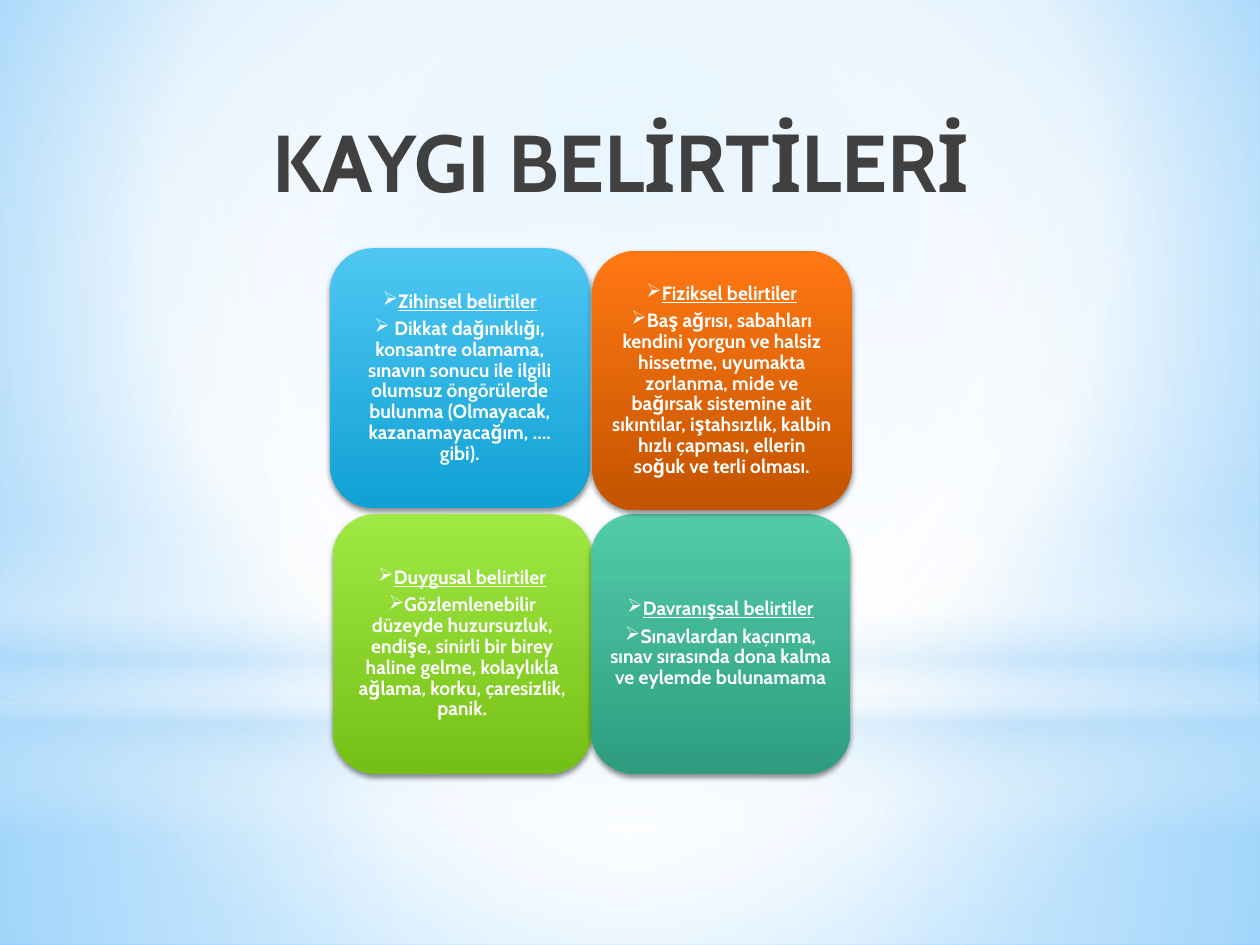
from lxml import etree
from pptx import Presentation
from pptx.dml.color import RGBColor
from pptx.enum.shapes import MSO_SHAPE as Preset
from pptx.enum.text import MSO_ANCHOR as Anchor, PP_ALIGN as Align
from pptx.oxml.ns import qn
from pptx.util import Inches, Pt

FONT = "Cabin"
WHITE = RGBColor(0xFF, 0xFF, 0xFF)
BLACK = RGBColor(0x00, 0x00, 0x00)
CHARCOAL = RGBColor(0x40, 0x40, 0x40)
MIST = RGBColor(0xB4, 0xDC, 0xFA)
SKY = RGBColor(0x9E, 0xD5, 0xFF)
AZURE = RGBColor(0x5B, 0xB9, 0xFF)
BLUES = RGBColor(0x4E, 0xC7, 0xF2), RGBColor(0x11, 0xA1, 0xD4)
GREENS = RGBColor(0xA0, 0xE8, 0x44), RGBColor(0x75, 0xC0, 0x16)
TEALS = RGBColor(0x52, 0xCB, 0xA9), RGBColor(0x2E, 0x9D, 0x7F)
ORANGES = RGBColor(0xFF, 0x78, 0x13), RGBColor(0xC4, 0x54, 0x00)

CENTRE = (50, 50, 50, 50)
TILE_SIZE = Inches(2.06)
TILE_MARGIN = Inches(0.1)

# Left, top, colours, heading, description
TILES = [
    (2.62, 1.97, BLUES, "Zihinsel belirtiler",
     " Dikkat dağınıklığı, konsantre olamama, sınavın sonucu ile ilgili olumsuz "
     "öngörülerde bulunma (Olmayacak, kazanamayacağım, …. gibi)."),
    (2.64, 4.08, GREENS, "Duygusal belirtiler",
     "Gözlemlenebilir düzeyde huzursuzluk, endişe, sinirli bir birey haline gelme, "
     "kolaylıkla ağlama, korku, çaresizlik, panik."),
    (4.69, 4.08, TEALS, "Davranışsal belirtiler",
     "Sınavlardan kaçınma, sınav sırasında dona kalma ve eylemde bulunamama"),
    (4.7, 1.99, ORANGES, "Fiziksel belirtiler",
     "Baş ağrısı, sabahları kendini yorgun ve halsiz hissetme, uyumakta zorlanma, "
     "mide ve bağırsak sistemine ait sıkıntılar, iştahsızlık, kalbin hızlı çapması, "
     "ellerin soğuk ve terli olması."),
]


def add_node(parent, tag, **attributes):
    values = {name: str(value) for name, value in attributes.items()}
    return etree.SubElement(parent, qn(tag), values)


def add_colour(parent, colour, opacity):
    node = add_node(parent, "a:srgbClr", val=colour)
    if opacity < 100:
        add_node(node, "a:alpha", val=opacity * 1000)


def set_gradient(owner, fill, stops, focus=None):
    """Stops are (position, colour, opacity); without a focus they run downwards."""
    fill.gradient()
    gradient = next(owner.iter(qn("a:gradFill")))
    for child in list(gradient):
        gradient.remove(child)
    stop_list = add_node(gradient, "a:gsLst")
    for position, colour, opacity in stops:
        add_colour(add_node(stop_list, "a:gs", pos=position * 1000), colour, opacity)
    if focus:
        circle = add_node(gradient, "a:path", path="circle")
        sides = {side: share * 1000 for side, share in zip("ltrb", focus)}
        add_node(circle, "a:fillToRect", **sides)
    else:
        add_node(gradient, "a:lin", ang=90 * 60000, scaled=0)


def add_gradient_shape(shapes, preset, box, stops, focus=None):
    shape = shapes.add_shape(preset, *box)
    shape.shadow.inherit = False
    shape.line.fill.background()
    set_gradient(shape._element, shape.fill, stops, focus)
    return shape


def add_backdrop(page, width, height):
    set_gradient(page._element, page.background.fill,
                 [(0, SKY, 100), (60, WHITE, 100), (100, AZURE, 100)], (20, 10, 20, 60))
    horizon = Inches(5.58)
    layers = [
        (Preset.RECTANGLE, horizon, height - horizon,
         [(0, WHITE, 91), (37, WHITE, 76), (100, MIST, 79)], CENTRE),
        (Preset.RECTANGLE, 0, horizon,
         [(0, WHITE, 89), (48, WHITE, 62), (100, MIST, 79)], CENTRE),
        (Preset.RECTANGLE, Inches(4.12), Inches(2.5),
         [(0, WHITE, 0), (29, WHITE, 30), (45, MIST, 40),
          (55, WHITE, 26), (65, MIST, 60), (100, WHITE, 0)], None),
        (Preset.OVAL, Inches(1.75), horizon, [(0, WHITE, 100), (56, WHITE, 0)], CENTRE),
    ]
    for preset, top, depth, stops, focus in layers:
        add_gradient_shape(page.shapes, preset, (0, top, width, depth), stops, focus)


def place_title(page, left, top, width, height):
    title = page.shapes.title
    title.left, title.top, title.width, title.height = left, top, width, height
    frame = title.text_frame
    frame.text = "KAYGI BELİRTİLERİ"
    frame.vertical_anchor = Anchor.TOP
    para = frame.paragraphs[0]
    para.alignment = Align.RIGHT
    font = para.runs[0].font
    font.name, font.size, font.bold = FONT, Pt(46), True
    font.color.rgb = CHARCOAL
    # Bring the title in front of the backdrop
    page.shapes._spTree.append(title._element)


def add_tile(page, left, top, size, colours, heading, description):
    group = page.shapes.add_group_shape()

    # Rounded card with a soft shadow below it
    stops = [(0, colours[0], 100), (100, colours[1], 100)]
    card = add_gradient_shape(group.shapes, Preset.ROUNDED_RECTANGLE,
                              (left, top, size, size), stops)
    effects = next(card._element.iter(qn("a:effectLst")))
    shadow = add_node(effects, "a:outerShdw", blurRad=Pt(3.1), dist=Pt(1.8),
                      dir=90 * 60000, rotWithShape=0)
    add_colour(shadow, BLACK, 45)

    # Bulleted heading and description
    inner = size - 2 * TILE_MARGIN
    label = group.shapes.add_textbox(left + TILE_MARGIN, top + TILE_MARGIN, inner, inner)
    frame = label.text_frame
    frame.word_wrap = True
    frame.vertical_anchor = Anchor.MIDDLE
    frame.margin_left = frame.margin_right = Inches(0.05)
    frame.margin_top = frame.margin_bottom = Inches(0.05)
    frame.text = f"{heading}\n{description}"
    for para in frame.paragraphs:
        para.alignment = Align.CENTER
        para.line_spacing = 0.9
        para.space_after = Pt(3.85)
        properties = para._p.get_or_add_pPr()
        properties.set("marL", "0")
        properties.set("indent", "0")
        add_node(properties, "a:buChar", char="➢")
        font = para.runs[0].font
        font.name, font.size, font.bold = FONT, Pt(11), True
        font.color.rgb = WHITE
    frame.paragraphs[0].runs[0].font.underline = True


def main():
    deck = Presentation()
    deck.slide_width, deck.slide_height = Inches(10), Inches(7.5)
    page = deck.slides.add_slide(deck.slide_layouts[5])
    add_backdrop(page, deck.slide_width, deck.slide_height)
    place_title(page, Inches(0.67), Inches(0.84), Inches(7.12), Inches(1.25))
    for left, top, colours, heading, description in TILES:
        add_tile(page, Inches(left), Inches(top), TILE_SIZE, colours, heading, description)
    deck.save("out.pptx")


if __name__ == "__main__":
    main()
